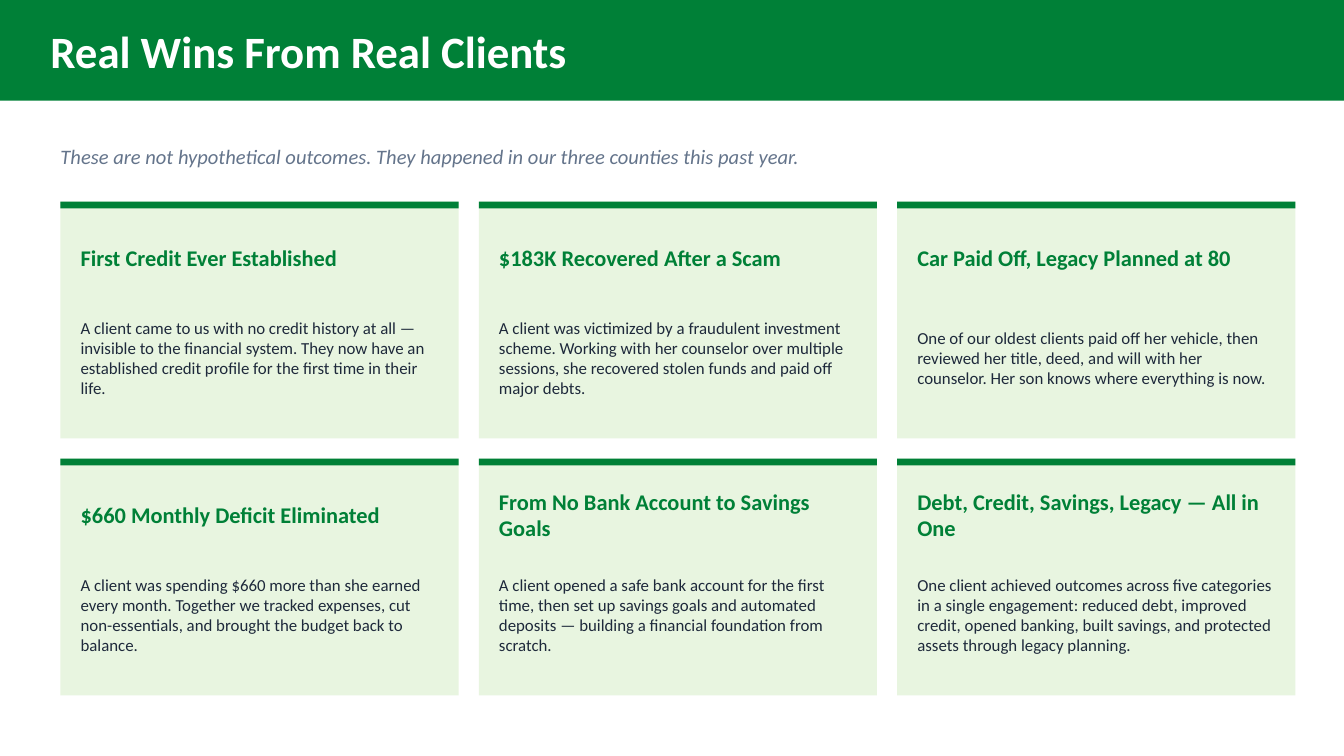
from pptx import Presentation
from pptx.dml.color import RGBColor
from pptx.enum.shapes import MSO_SHAPE as Preset
from pptx.enum.text import MSO_ANCHOR as Anchor, MSO_AUTO_SIZE as AutoSize, PP_ALIGN as Align
from pptx.util import Pt

GREEN, PALE_GREEN, SLATE, INK, WHITE = "008037", "E8F5E0", "64748B", "1E293B", "FFFFFF"

MARGIN, GAP, PADDING = 32.4, 10.8, 10.8
CARDS_TOP, CARD_WIDTH, CARD_HEIGHT = 108, 213.3, 126.9
STRIPE_HEIGHT, HEADING_HEIGHT, BODY_HEIGHT = 3.6, 38.25, 64.8
COLUMNS = 3

STORIES = [
    ("First Credit Ever Established",
     "A client came to us with no credit history at all — invisible to the financial system. "
     "They now have an established credit profile for the first time in their life."),
    ("$183K Recovered After a Scam",
     "A client was victimized by a fraudulent investment scheme. Working with her counselor "
     "over multiple sessions, she recovered stolen funds and paid off major debts."),
    ("Car Paid Off, Legacy Planned at 80",
     "One of our oldest clients paid off her vehicle, then reviewed her title, deed, and will "
     "with her counselor. Her son knows where everything is now."),
    ("$660 Monthly Deficit Eliminated",
     "A client was spending $660 more than she earned every month. Together we tracked "
     "expenses, cut non-essentials, and brought the budget back to balance."),
    ("From No Bank Account to Savings Goals",
     "A client opened a safe bank account for the first time, then set up savings goals and "
     "automated deposits — building a financial foundation from scratch."),
    ("Debt, Credit, Savings, Legacy — All in One",
     "One client achieved outcomes across five categories in a single engagement: reduced "
     "debt, improved credit, opened banking, built savings, and protected assets through "
     "legacy planning."),
]


def color(hex_string):
    return RGBColor.from_string(hex_string)


class SlideBuilder:
    """Holds the font and the slide being filled; lengths are in points."""

    def __init__(self, slide, font_name="Calibri"):
        self.slide = slide
        self.font_name = font_name

    def set_text(self, shape, text, size, text_color, bold=False, italic=False):
        frame = shape.text_frame
        frame.text = text
        frame.word_wrap = True
        frame.auto_size = AutoSize.NONE
        frame.vertical_anchor = Anchor.MIDDLE
        frame.margin_left = frame.margin_top = frame.margin_right = frame.margin_bottom = 0
        paragraph = frame.paragraphs[0]
        paragraph.alignment = Align.LEFT
        font = paragraph.font
        font.name, font.size = self.font_name, Pt(size)
        font.bold, font.italic = bold, italic
        font.color.rgb = color(text_color)

    def rectangle(self, left, top, width, height, fill):
        shape = self.slide.shapes.add_shape(
            Preset.RECTANGLE, Pt(left), Pt(top), Pt(width), Pt(height))
        shape.shadow.inherit = False
        shape.fill.solid()
        shape.fill.fore_color.rgb = color(fill)
        shape.line.fill.background()
        return shape

    def text(self, left, top, width, height, *content, **style):
        box = self.slide.shapes.add_textbox(Pt(left), Pt(top), Pt(width), Pt(height))
        self.set_text(box, *content, **style)

    def title_band(self, text):
        band = self.rectangle(0, 0, 720, 54, GREEN)
        title = self.slide.shapes.title
        title.left, title.top, title.width, title.height = Pt(27), Pt(0), Pt(666), Pt(54)
        self.set_text(title, text, 24, WHITE, bold=True)
        title.element.addprevious(band.element)  # keep the band behind the title

    def card(self, left, top, heading, body):
        self.rectangle(left, top, CARD_WIDTH, CARD_HEIGHT, PALE_GREEN)
        self.rectangle(left, top, CARD_WIDTH, STRIPE_HEIGHT, GREEN)
        text_left, text_width = left + PADDING, CARD_WIDTH - 2 * PADDING
        self.text(text_left, top + PADDING, text_width, HEADING_HEIGHT,
                  heading, 12, GREEN, bold=True)
        body_top = top + CARD_HEIGHT - PADDING - BODY_HEIGHT
        self.text(text_left, body_top, text_width, BODY_HEIGHT, body, 9, INK)


def main():
    presentation = Presentation()
    presentation.slide_width, presentation.slide_height = Pt(720), Pt(405)
    title_only = presentation.slide_layouts[5]
    builder = SlideBuilder(presentation.slides.add_slide(title_only))

    builder.title_band("Real Wins From Real Clients")
    builder.text(MARGIN, 70.2, 655.2, 27,
                 "These are not hypothetical outcomes. "
                 "They happened in our three counties this past year.",
                 11, SLATE, italic=True)
    for index, (heading, body) in enumerate(STORIES):
        row, column = divmod(index, COLUMNS)
        builder.card(MARGIN + column * (CARD_WIDTH + GAP),
                     CARDS_TOP + row * (CARD_HEIGHT + GAP), heading, body)

    presentation.save("out.pptx")


if __name__ == "__main__":
    main()
